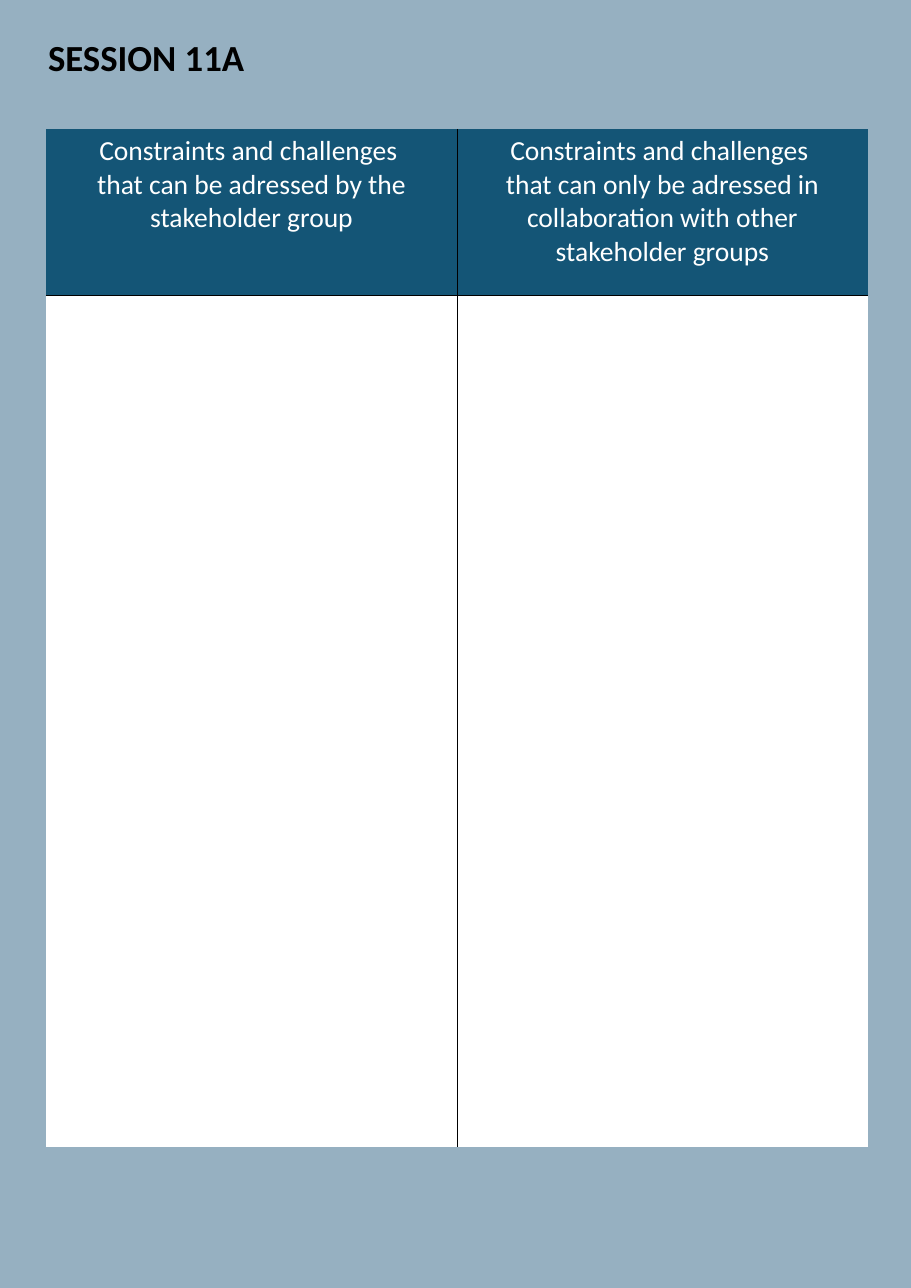
from dataclasses import dataclass

from lxml.etree import SubElement
from pptx import Presentation
from pptx.dml.color import RGBColor
from pptx.enum.text import MSO_ANCHOR, MSO_AUTO_SIZE, PP_ALIGN
from pptx.oxml.ns import qn
from pptx.slide import Slide
from pptx.table import Table, _Cell
from pptx.text.text import TextFrame
from pptx.util import Emu, Pt

EMU_PER_PX = 8298


@dataclass(frozen=True)
class Theme:
    font: str = "Calibri"
    background: str = "96B0C1"
    header_fill: str = "145576"
    body_fill: str = "FFFFFF"
    header_text: str = "FFFFFF"
    title_text: str = "000000"
    rule: str = "000000"
    title_size: int = 24
    header_size: int = 18
    rule_width: float = 0.5


@dataclass(frozen=True)
class Box:
    left: int
    top: int
    width: int
    height: int

    def emu(self) -> list[Emu]:
        return [px(n) for n in (self.left, self.top, self.width, self.height)]


@dataclass(frozen=True)
class Column:
    heading: tuple[str, ...]


THEME = Theme()
PAGE = Box(0, 0, 911, 1288)
TITLE = Box(37, 29, 835, 55)
WORKSHEET = Box(46, 129, 822, 1018)
HEADER_HEIGHT = 166
COLUMNS = [
    Column(("Constraints and challenges ",
            "that can be adressed by the stakeholder group")),
    Column(("Constraints and challenges ",
            "that can only be adressed in collaboration with other stakeholder groups")),
]


def px(length: int) -> Emu:
    return Emu(length * EMU_PER_PX)


def write(frame: TextFrame, lines: tuple[str, ...], size: int, color: str,
          bold: bool, align: PP_ALIGN) -> None:
    frame.text = "\n".join(lines)
    font_format = {"name": THEME.font, "size": Pt(size), "bold": bold}
    for paragraph in frame.paragraphs:
        paragraph.alignment = align
        for run in paragraph.runs:
            for attribute, value in font_format.items():
                setattr(run.font, attribute, value)
            run.font.color.rgb = RGBColor.from_string(color)


def set_borders(cell: _Cell, inner_sides: str) -> None:
    """Rule the sides named by letter (L, R, T, B) and clear the others."""
    properties = cell._tc.get_or_add_tcPr()
    for position, side in enumerate("LRTB"):
        line = SubElement(properties, qn(f"a:ln{side}"), w=str(Pt(THEME.rule_width)))
        if side in inner_sides:
            fill = SubElement(line, qn("a:solidFill"))
            SubElement(fill, qn("a:srgbClr"), val=THEME.rule)
        else:
            SubElement(line, qn("a:noFill"))
        properties.insert(position, line)


def add_title(slide: Slide) -> None:
    title = slide.shapes.title
    title.left, title.top, title.width, title.height = TITLE.emu()
    frame = title.text_frame
    frame_format = {"word_wrap": True, "auto_size": MSO_AUTO_SIZE.SHAPE_TO_FIT_TEXT,
                    "vertical_anchor": MSO_ANCHOR.TOP}
    for attribute, value in frame_format.items():
        setattr(frame, attribute, value)
    write(frame, ("SESSION 11A",), THEME.title_size, THEME.title_text, True, PP_ALIGN.LEFT)


def add_worksheet(slide: Slide) -> Table:
    worksheet = slide.shapes.add_table(2, len(COLUMNS), *WORKSHEET.emu()).table
    worksheet.first_row = worksheet.horz_banding = False
    row_heights = (HEADER_HEIGHT, WORKSHEET.height - HEADER_HEIGHT)
    for row, height in zip(worksheet.rows, row_heights):
        row.height = px(height)
    for index, column in enumerate(COLUMNS):
        worksheet.columns[index].width = px(WORKSHEET.width // len(COLUMNS))
        across = ("L" if index else "") + ("R" if index < len(COLUMNS) - 1 else "")
        header, body = worksheet.cell(0, index), worksheet.cell(1, index)
        write(header.text_frame, column.heading, THEME.header_size,
              THEME.header_text, False, PP_ALIGN.CENTER)
        for cell, fill, down in ((header, THEME.header_fill, "B"),
                                 (body, THEME.body_fill, "T")):
            cell.fill.solid()
            cell.fill.fore_color.rgb = RGBColor.from_string(fill)
            set_borders(cell, across + down)
    return worksheet


def main() -> None:
    presentation = Presentation()
    presentation.slide_width, presentation.slide_height = px(PAGE.width), px(PAGE.height)
    slide = presentation.slides.add_slide(presentation.slide_layouts[5])
    slide.background.fill.solid()
    slide.background.fill.fore_color.rgb = RGBColor.from_string(THEME.background)
    add_title(slide)
    add_worksheet(slide)
    presentation.save("out.pptx")


if __name__ == "__main__":
    main()
